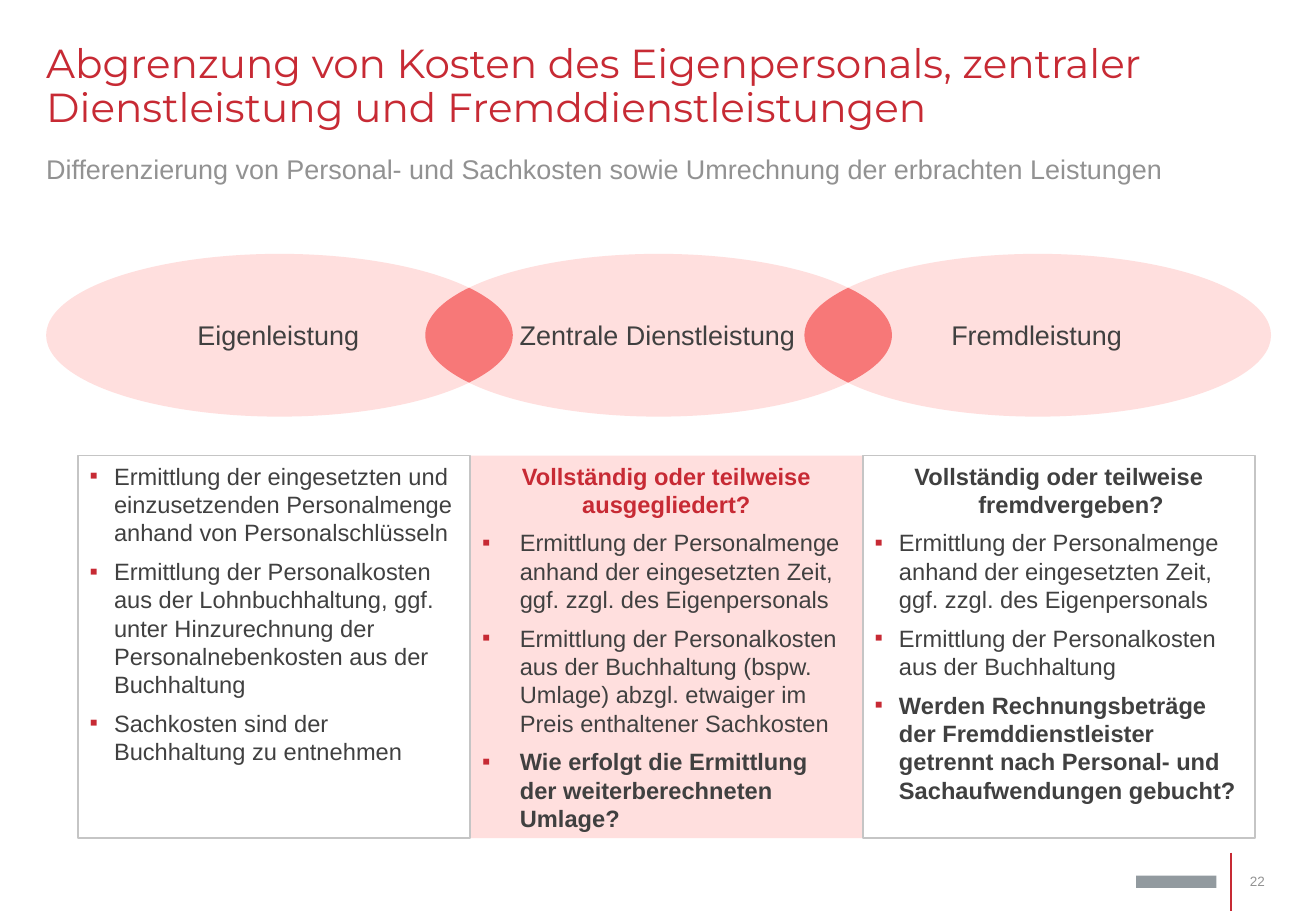
from dataclasses import dataclass
from math import acos, cos, pi, sin

from lxml.etree import SubElement
from pptx import Presentation
from pptx.dml.color import RGBColor
from pptx.enum.shapes import MSO_CONNECTOR, MSO_SHAPE
from pptx.enum.text import MSO_ANCHOR as ANCHOR, PP_ALIGN as ALIGN
from pptx.oxml.ns import qn
from pptx.util import Inches, Pt

COLORS = {
    "red": "C72A34", "pink": "FFDFDE", "overlap": "F77878", "white": "FFFFFF",
    "text": "404040", "subtitle": "929292", "number": "939393",
    "border": "C5C5C5", "brand": "929A9F",
}


@dataclass
class Label:
    text: str
    left: float
    top: float
    width: float
    height: float
    size: float
    color: str
    font: str = "Arial"
    spacing: float = 1.0
    align: ALIGN = ALIGN.LEFT
    anchor: ANCHOR = ANCHOR.TOP


@dataclass
class Item:
    text: str
    bullet: bool = True
    bold: bool = False
    color: str = "text"


@dataclass
class Panel:
    column: int
    fill: str
    border: str
    indent: float
    items: list[Item]
    head_indent: float = 0


LABELS = [
    Label("Abgrenzung von Kosten des Eigenpersonals, zentraler Dienstleistung "
          "und Fremddienstleistungen", 0.38, 0.36, 10.08, 0.77, 24, "red",
          font="Montserrat", spacing=0.9),
    Label("Differenzierung von Personal- und Sachkosten sowie Umrechnung der "
          "erbrachten Leistungen", 0.38, 1.23, 10.08, 0.31, 16, "subtitle", spacing=1.1),
    Label("22", 10.18, 7.16, 0.23, 0.19, 8, "number",
          align=ALIGN.RIGHT, anchor=ANCHOR.MIDDLE),
]

SERVICES = ["Eigenleistung", "Zentrale Dienstleistung", "Fremdleistung"]
OVAL_LEFT, OVAL_TOP, OVAL_W, OVAL_H, OVAL_STEP = 0.38, 2.09, 3.84, 1.34, 3.12

PANEL_LEFT, PANEL_TOP, PANEL_W, PANEL_H = 0.64, 3.75, 3.23, 3.15
STAFF = ("Ermittlung der Personalmenge anhand der eingesetzten Zeit, "
         "ggf. zzgl. des Eigenpersonals")
PANELS = [
    Panel(1, "pink", "", 0.31, [
        Item("Vollständig oder teilweise ausgegliedert?", False, True, "red"),
        Item(STAFF),
        Item("Ermittlung der Personalkosten aus der Buchhaltung (bspw. Umlage) "
             "abzgl. etwaiger im Preis enthaltener Sachkosten"),
        Item("Wie erfolgt die Ermittlung der weiterberechneten Umlage?", bold=True),
    ]),
    Panel(0, "white", "border", 0.2, [
        Item("Ermittlung der eingesetzten und einzusetzenden Personalmenge "
             "anhand von Personalschlüsseln"),
        Item("Ermittlung der Personalkosten aus der Lohnbuchhaltung, ggf. unter "
             "Hinzurechnung der Personalnebenkosten aus der Buchhaltung"),
        Item("Sachkosten sind der Buchhaltung zu entnehmen"),
    ]),
    Panel(2, "white", "border", 0.2, [
        Item("Vollständig oder teilweise fremdvergeben?", False, True),
        Item(STAFF),
        Item("Ermittlung der Personalkosten aus der Buchhaltung"),
        Item("Werden Rechnungsbeträge der Fremddienstleister getrennt nach "
             "Personal- und Sachaufwendungen gebucht?", bold=True),
    ], head_indent=0.2),
]


def rgb(name: str) -> RGBColor:
    return RGBColor.from_string(COLORS[name])


def paint(sp, fill: str, border: str = "") -> None:
    sp.shadow.inherit = False
    sp.fill.solid()
    sp.fill.fore_color.rgb = rgb(fill)
    if border:
        sp.line.color.rgb = rgb(border)
        sp.line.width = Pt(1)
    else:
        sp.line.fill.background()


def style(p, size: float, color: str, font: str = "Arial", bold: bool = False) -> None:
    for r in p.runs:
        r.font.size = Pt(size)
        r.font.name = font
        r.font.bold = bold
        r.font.color.rgb = rgb(color)


def set_indent(p, indent: float) -> None:
    pPr = p._p.get_or_add_pPr()
    pPr.set("marL", str(Inches(indent)))
    pPr.set("indent", str(-Inches(indent)))


def add_bullet(p) -> None:
    pPr = p._p.get_or_add_pPr()
    SubElement(SubElement(pPr, qn("a:buClr")), qn("a:srgbClr")).set("val", COLORS["red"])
    SubElement(pPr, qn("a:buFont")).set("typeface", "Arial")
    SubElement(pPr, qn("a:buChar")).set("char", "▪")


def add_label(s, label: Label) -> None:
    sp = s.shapes.add_textbox(Inches(label.left), Inches(label.top),
                              Inches(label.width), Inches(label.height))
    tf = sp.text_frame
    tf.word_wrap = True
    tf.margin_left = tf.margin_right = tf.margin_top = tf.margin_bottom = 0
    tf.vertical_anchor = label.anchor
    tf.text = label.text
    p = tf.paragraphs[0]
    p.alignment = label.align
    p.line_spacing = label.spacing
    style(p, label.size, label.color, label.font)


def add_oval(s, index: int, text: str) -> None:
    sp = s.shapes.add_shape(MSO_SHAPE.OVAL, Inches(OVAL_LEFT + index * OVAL_STEP),
                            Inches(OVAL_TOP), Inches(OVAL_W), Inches(OVAL_H))
    paint(sp, "pink")
    tf = sp.text_frame
    tf.word_wrap = True
    tf.margin_left = Inches(0.08)
    tf.vertical_anchor = ANCHOR.MIDDLE
    tf.text = text
    p = tf.paragraphs[0]
    p.alignment = ALIGN.CENTER
    style(p, 16, "text")


def add_overlap(s, index: int, steps: int = 40) -> None:
    """Fill the lens shared by an oval and its right-hand neighbour."""
    rx, ry = OVAL_W / 2, OVAL_H / 2
    half = acos(OVAL_STEP / OVAL_W)
    cx, cy = OVAL_LEFT + rx + index * OVAL_STEP, OVAL_TOP + ry
    points = []
    for center, turn in ((cx, 0), (cx + OVAL_STEP, pi)):
        for i in range(steps):
            t = turn - half + 2 * half * i / steps
            points.append((Inches(center + rx * cos(t)), Inches(cy + ry * sin(t))))
    builder = s.shapes.build_freeform(*points[0])
    builder.add_line_segments(points[1:], close=True)
    paint(builder.convert_to_shape(), "overlap")


def add_panel(s, panel: Panel) -> None:
    sp = s.shapes.add_shape(MSO_SHAPE.RECTANGLE,
                            Inches(PANEL_LEFT + panel.column * PANEL_W),
                            Inches(PANEL_TOP), Inches(PANEL_W), Inches(PANEL_H))
    paint(sp, panel.fill, panel.border)
    tf = sp.text_frame
    tf.word_wrap = True
    tf.vertical_anchor = ANCHOR.TOP
    tf.text = "\n".join(item.text for item in panel.items)
    for i, (p, item) in enumerate(zip(tf.paragraphs, panel.items)):
        set_indent(p, panel.indent if item.bullet else panel.head_indent)
        if item.bullet:
            add_bullet(p)
        p.alignment = ALIGN.LEFT if item.bullet else ALIGN.CENTER
        if i:
            p.space_before = Pt(6)
        style(p, 14, item.color, bold=item.bold)


def add_footer(s) -> None:
    line = s.shapes.add_connector(MSO_CONNECTOR.STRAIGHT, Inches(10.13), Inches(7.02),
                                  Inches(10.13), Inches(7.5))
    line.line.color.rgb = rgb("red")
    line.line.width = Pt(1)
    SubElement(line._element.spPr, qn("a:effectLst"))
    mark = s.shapes.add_shape(MSO_SHAPE.RECTANGLE, Inches(9.35), Inches(7.21),
                              Inches(0.66), Inches(0.1))
    paint(mark, "brand")


def main() -> None:
    prs = Presentation()
    prs.slide_width, prs.slide_height = Inches(10.83), Inches(7.5)
    s = prs.slides.add_slide(prs.slide_layouts[6])

    # Footer, title, subtitle and page number
    add_footer(s)
    for label in LABELS:
        add_label(s, label)

    # Overlapping services
    for i, text in enumerate(SERVICES):
        add_oval(s, i, text)
    for i in range(len(SERVICES) - 1):
        add_overlap(s, i)

    # Explanations below
    for panel in PANELS:
        add_panel(s, panel)

    prs.save("out.pptx")


if __name__ == "__main__":
    main()
